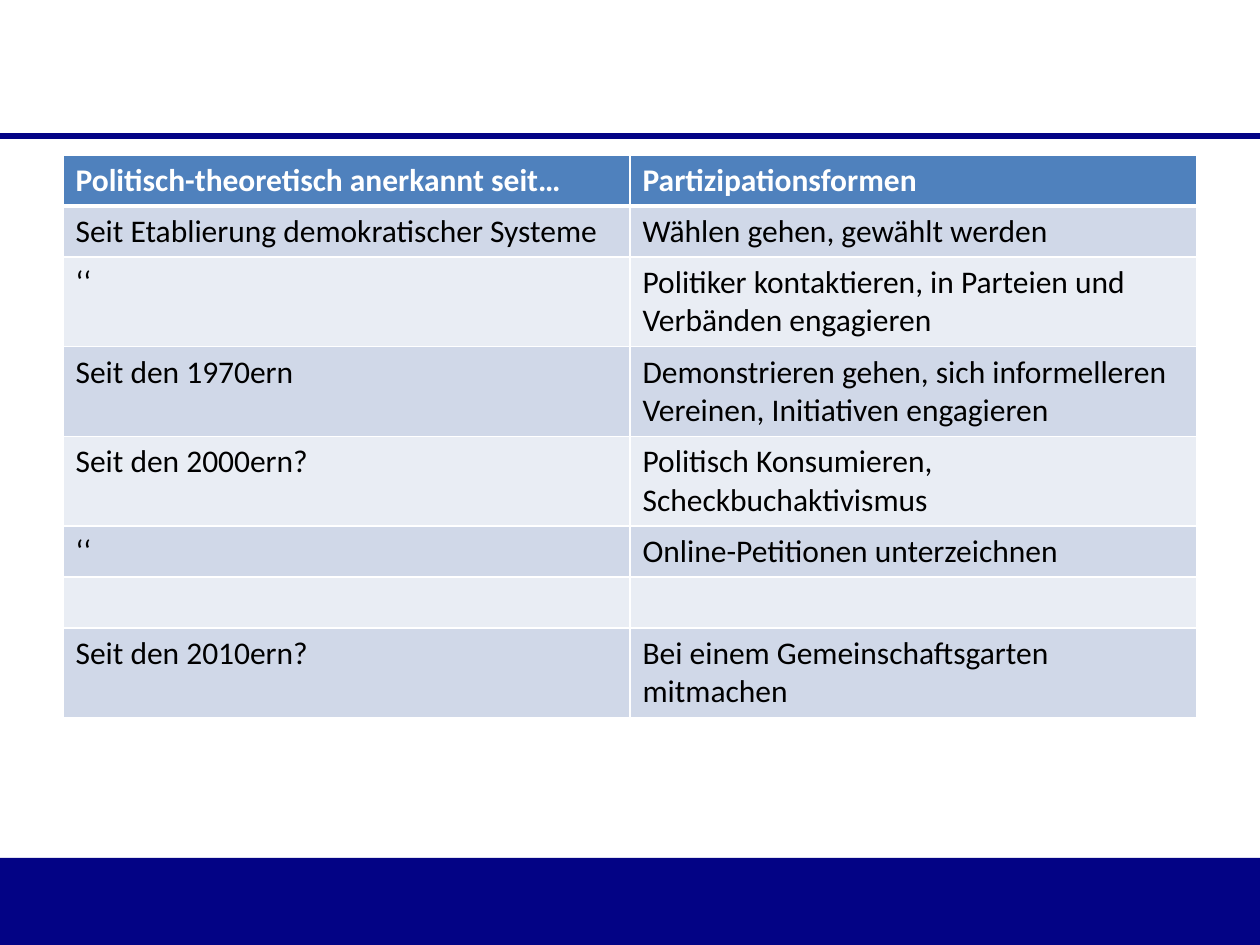
from dataclasses import dataclass
from typing import Any

import pptx
import pptx.dml.color
import pptx.enum.shapes
import pptx.oxml
import pptx.oxml.ns
import pptx.util

EMU_PER_PX = 914400 / 126


@dataclass(frozen=True)
class Theme:
    navy: str = "030385"
    header: str = "4F81BD"
    band_dark: str = "D0D8E8"
    band_light: str = "E9EDF4"
    white: str = "FFFFFF"
    black: str = "000000"
    font: str = "Calibri"
    text_size: int = 18
    rule: int = 3
    border: int = 1
    header_border: int = 3


@dataclass(frozen=True)
class Row:
    since: str
    form: str
    height: int = 51


THEME = Theme()
TALL = 89
ROWS = [
    Row("Politisch-theoretisch anerkannt seit…", "Partizipationsformen"),
    Row("Seit Etablierung demokratischer Systeme", "Wählen gehen, gewählt werden"),
    Row("‘‘", "Politiker kontaktieren, in Parteien und Verbänden engagieren", TALL),
    Row("Seit den 1970ern",
        "Demonstrieren gehen, sich informelleren Vereinen, Initiativen engagieren", TALL),
    Row("Seit den 2000ern?", "Politisch Konsumieren, Scheckbuchaktivismus", TALL),
    Row("‘‘", "Online-Petitionen unterzeichnen"),
    Row("", ""),
    Row("Seit den 2010ern?", "Bei einem Gemeinschaftsgarten mitmachen", TALL),
]


def px(n: int) -> pptx.util.Emu:
    return pptx.util.Emu(round(n * EMU_PER_PX))


def rgb(color: str) -> pptx.dml.color.RGBColor:
    return pptx.dml.color.RGBColor.from_string(color)


def paint(fill: Any, color: str) -> None:
    fill.solid()
    fill.fore_color.rgb = rgb(color)


def add_footer_band(slide: Any) -> None:
    sp = slide.shapes.add_shape(
        pptx.enum.shapes.MSO_SHAPE.RECTANGLE, px(0), px(858), px(1260), px(87))
    sp.shadow.inherit = False
    paint(sp.fill, THEME.navy)
    sp.line.fill.background()


def add_title_rule(slide: Any) -> None:
    cxn = slide.shapes.add_connector(
        pptx.enum.shapes.MSO_CONNECTOR.STRAIGHT, px(0), px(136), px(1260), px(136))
    cxn.line.color.rgb = rgb(THEME.navy)
    cxn.line.width = pptx.util.Pt(THEME.rule)
    cxn._element.spPr.append(pptx.oxml.parse_xml(
        f'<a:effectLst {pptx.oxml.ns.nsdecls("a")}/>'))


def add_borders(cell: Any, bottom: int, top: int) -> None:
    tc_pr = cell._tc.get_or_add_tcPr()
    widths = {"lnL": THEME.border, "lnR": THEME.border, "lnT": top, "lnB": bottom}
    for tag, width in widths.items():
        tc_pr.append(pptx.oxml.parse_xml(
            f'<a:{tag} {pptx.oxml.ns.nsdecls("a")} w="{pptx.util.Pt(width)}">'
            f'<a:solidFill><a:srgbClr val="{THEME.white}"/></a:solidFill></a:{tag}>'))


def fill_cell(cell: Any, text: str, i: int) -> None:
    is_header = i == 0
    add_borders(cell,
                bottom=THEME.header_border if is_header else THEME.border,
                top=THEME.header_border if i == 1 else THEME.border)
    band = THEME.band_dark if i % 2 else THEME.band_light
    paint(cell.fill, THEME.header if is_header else band)
    p = cell.text_frame.paragraphs[0]
    if not text:
        return
    r = p.add_run()
    r.text = text
    style = {"name": THEME.font, "size": pptx.util.Pt(THEME.text_size), "bold": is_header}
    for key, value in style.items():
        setattr(r.font, key, value)
    r.font.color.rgb = rgb(THEME.white if is_header else THEME.black)


def add_participation_table(slide: Any, rows: list[Row]) -> None:
    height = sum(row.height for row in rows)
    table = slide.shapes.add_table(
        len(rows), 2, px(63), px(155), px(1134), px(height)).table
    for i, row in enumerate(rows):
        table.rows[i].height = px(row.height)
        for j, text in enumerate((row.since, row.form)):
            fill_cell(table.cell(i, j), text, i)


def main() -> None:
    prs = pptx.Presentation()
    prs.slide_width, prs.slide_height = px(1260), px(945)
    s = prs.slides.add_slide(prs.slide_layouts[6])
    paint(s.background.fill, THEME.white)
    add_footer_band(s)
    add_title_rule(s)
    add_participation_table(s, ROWS)
    prs.save("out.pptx")


if __name__ == "__main__":
    main()
